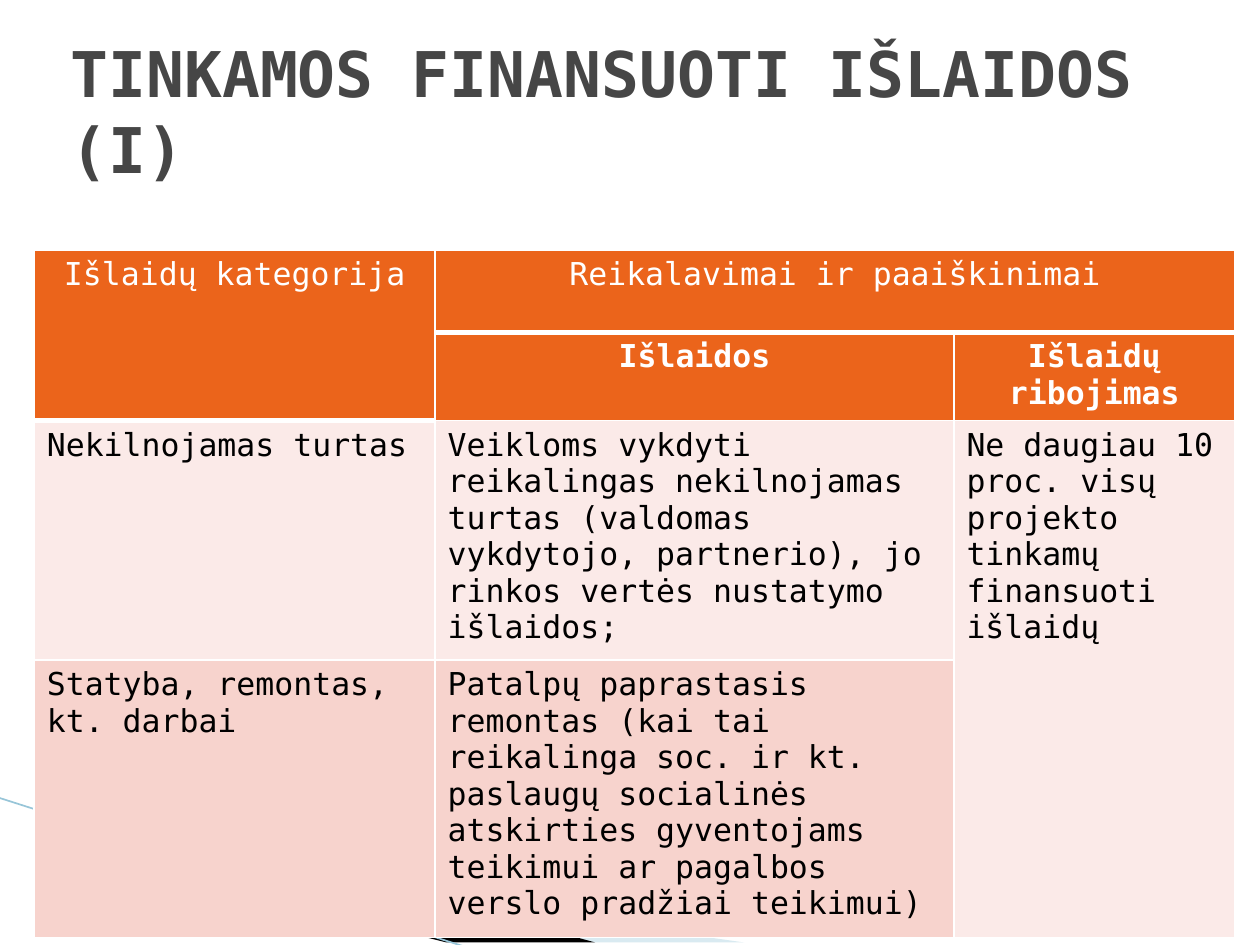
import pptx
import pptx.dml.color
import pptx.enum.shapes
import pptx.enum.text
import pptx.oxml
import pptx.oxml.ns
import pptx.util
from lxml import etree

Cm, Pt = pptx.util.Cm, pptx.util.Pt
PP_ALIGN = pptx.enum.text.PP_ALIGN
FONT = "DejaVu Sans Mono"
HEADER, LIGHT, DARK = "EB641B", "FBEAE8", "F7D3CD"

COLUMNS = [8.08, 10.46, 5.66]
ROWS = [1.65, 1.4, 4.14, 5.08]
FILLS = [HEADER, HEADER, LIGHT, DARK]
TEXTS = [
    ["Išlaidų kategorija", "Reikalavimai ir paaiškinimai", ""],
    ["", "Išlaidos", "Išlaidų ribojimas"],
    ["Nekilnojamas turtas",
     "Veikloms vykdyti reikalingas nekilnojamas turtas (valdomas vykdytojo, "
     "partnerio), jo rinkos vertės nustatymo išlaidos;",
     "Ne daugiau 10 proc. visų projekto tinkamų finansuoti išlaidų"],
    ["Statyba, remontas, kt. darbai",
     "Patalpų paprastasis remontas (kai tai reikalinga soc. ir kt. paslaugų "
     "socialinės atskirties gyventojams teikimui ar pagalbos verslo pradžiai "
     "teikimui)",
     ""],
]
MERGES = [((0, 0), (1, 0)), ((0, 1), (0, 2)), ((2, 2), (3, 2))]


def rgb(value):
    return pptx.dml.color.RGBColor.from_string(value)


def sub(parent, tag, **attributes):
    return etree.SubElement(parent, pptx.oxml.ns.qn(tag), **attributes)


def add_run(p, text, size, color, bold=False):
    r = p.add_run()
    r.text = text
    r.font.name = FONT
    r.font.size = Pt(size)
    r.font.bold = bold
    r.font.color.rgb = rgb(color)


def add_band(s, points, color, opacity=None):
    """Add a filled polygon; points are in centimetres, opacity in percent."""
    builder = s.shapes.build_freeform(*points[0], scale=Cm(1))
    builder.add_line_segments(points[1:], close=True)
    sp = builder.convert_to_shape()
    sp.shadow.inherit = False
    sp.line.fill.background()
    sp.fill.solid()
    sp.fill.fore_color.rgb = rgb(color)
    if opacity is not None:
        fill_color = sp.fill._xPr.find(".//" + pptx.oxml.ns.qn("a:srgbClr"))
        sub(fill_color, "a:alpha", val=str(opacity * 1000))


def add_line(s, start, end, color, width):
    line = s.shapes.add_connector(
        pptx.enum.shapes.MSO_CONNECTOR.STRAIGHT,
        *[Cm(v) for v in start + end])
    line.line.color.rgb = rgb(color)
    line.line.width = Pt(width)
    sub(line._element.spPr, "a:effectLst")


def add_title(s, text):
    sp = s.shapes.add_textbox(Cm(1.17), Cm(1.32), Cm(22.86), Cm(1.8))
    tf = sp.text_frame
    tf.word_wrap = True
    tf.vertical_anchor = pptx.enum.text.MSO_ANCHOR.MIDDLE
    add_run(tf.paragraphs[0], text, 36, "464646", bold=True)


def set_borders(cell, color, bottom_width):
    tc_pr = cell._tc.get_or_add_tcPr()
    for side in "LRTB":
        width = bottom_width if side == "B" else 1
        ln = sub(tc_pr, "a:ln" + side, w=str(Pt(width)))
        sub(sub(ln, "a:solidFill"), "a:srgbClr", val=color)


def fill_cell(cell, text, row):
    set_borders(cell, "FFFFFF", 3 if row == 0 else 1)
    cell.fill.solid()
    cell.fill.fore_color.rgb = rgb(FILLS[row])
    if not text:
        return
    is_header = row < 2
    p = cell.text_frame.paragraphs[0]
    p.alignment = PP_ALIGN.CENTER if is_header else PP_ALIGN.LEFT
    add_run(p, text, 18, "FFFFFF" if is_header else "000000", bold=row == 1)


def add_cost_table(s):
    table = s.shapes.add_table(
        len(ROWS), len(COLUMNS), Cm(0.69), Cm(5.05),
        Cm(sum(COLUMNS)), Cm(sum(ROWS))).table
    table.first_row = False
    table.horz_banding = False
    for column, width in zip(table.columns, COLUMNS):
        column.width = Cm(width)
    for i, height in enumerate(ROWS):
        table.rows[i].height = Cm(height)
        for j, text in enumerate(TEXTS[i]):
            fill_cell(table.cell(i, j), text, i)
    for first, last in MERGES:
        table.cell(*first).merge(table.cell(*last))


def main():
    prs = pptx.Presentation()
    prs.slide_width, prs.slide_height = Cm(25.4), Cm(19.05)
    s = prs.slides.add_slide(prs.slide_layouts[6])
    add_band(s, [(1.4, 16.54), (15.11, 19.08), (11.58, 19.08), (1.4, 16.51)],
             "A0CBDC", opacity=40)
    add_band(s, [(1.35, 16.48), (11.61, 19.08), (9.45, 19.1), (1.37, 16.51)],
             "000000")
    add_line(s, (-0.03, 16.08), (9.42, 19.1), "97C5D8", 0.95)
    add_title(s, "TINKAMOS FINANSUOTI IŠLAIDOS (I)")
    add_cost_table(s)
    prs.save("out.pptx")


if __name__ == "__main__":
    main()
